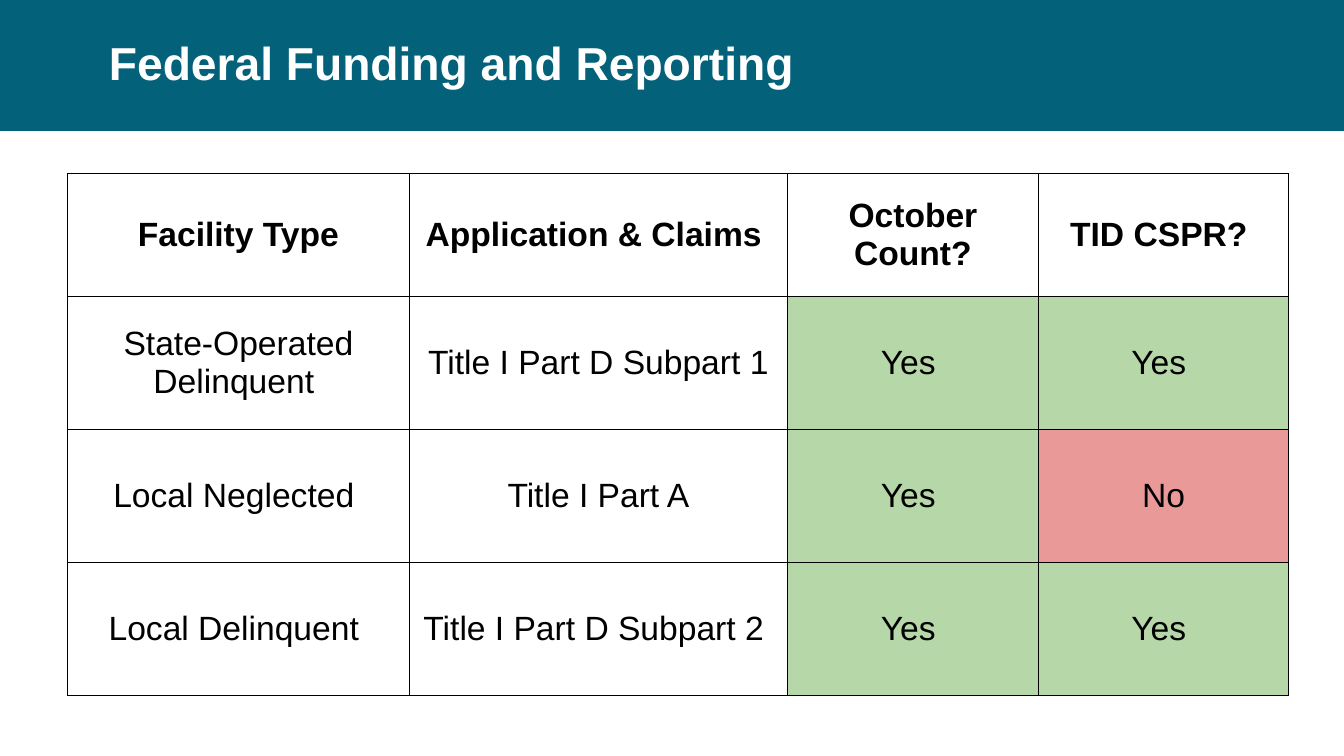
from lxml import etree
from pptx import Presentation
from pptx.dml.color import RGBColor
from pptx.enum.shapes import MSO_SHAPE
from pptx.enum.text import MSO_ANCHOR, PP_ALIGN
from pptx.oxml.ns import qn
from pptx.util import Inches, Pt

RECTANGLE = MSO_SHAPE.RECTANGLE
MIDDLE = MSO_ANCHOR.MIDDLE
LEFT, CENTER = PP_ALIGN.LEFT, PP_ALIGN.CENTER

TEAL = RGBColor(0x03, 0x61, 0x7A)
WHITE = RGBColor(0xFF, 0xFF, 0xFF)
BLACK = RGBColor(0x00, 0x00, 0x00)
GREEN = RGBColor(0xB6, 0xD7, 0xA8)
RED = RGBColor(0xEA, 0x99, 0x99)

# Content
TITLE = "Federal Funding and Reporting"
ROWS = [
    ("Facility Type", "Application & Claims ", "October Count?", "TID CSPR? "),
    ("State-Operated Delinquent ", "Title I Part D Subpart 1", "Yes ", "Yes "),
    ("Local Neglected ", "Title I Part A", "Yes ", "No"),
    ("Local Delinquent ", "Title I Part D Subpart 2 ", "Yes ", "Yes "),
]
ANSWER_FILLS = {"Yes": GREEN, "No": RED}

# Layout in inches
SLIDE_WIDTH, SLIDE_HEIGHT, BANNER_HEIGHT = 13.33, 7.5, 1.3
TITLE_LEFT, TITLE_WIDTH = 0.98, 11.5
TABLE_LEFT, TABLE_TOP = 0.67, 1.72
COLUMN_WIDTHS = [3.39, 3.75, 2.49, 2.48]
ROW_HEIGHTS = [1.22] + [1.32] * 3
CELL_MARGIN = 0.1
BORDER_WIDTH = Pt(0.75)

TITLE_FONT = {"name": "Arial", "size": Pt(33), "bold": True}
HEADER_FONT = {"name": "Arial", "size": Pt(24), "bold": True}
BODY_FONT = {**HEADER_FONT, "bold": False}


def write(para, text, font, color, alignment):
    para.alignment = alignment
    span = para.add_run()
    span.text = text
    for name, value in font.items():
        setattr(span.font, name, value)
    span.font.color.rgb = color


def draw_borders(cell):
    properties = cell._tc.get_or_add_tcPr()
    for position, side in enumerate(("lnL", "lnR", "lnT", "lnB")):
        line = etree.Element(qn(f"a:{side}"), w=str(int(BORDER_WIDTH)))
        fill = etree.SubElement(line, qn("a:solidFill"))
        etree.SubElement(fill, qn("a:srgbClr"), val=str(BLACK))
        properties.insert(position, line)


deck = Presentation()
deck.slide_width, deck.slide_height = Inches(SLIDE_WIDTH), Inches(SLIDE_HEIGHT)
page = deck.slides.add_slide(deck.slide_layouts[5])

# Banner, placed behind the title
banner = page.shapes.add_shape(
    RECTANGLE, 0, 0, Inches(SLIDE_WIDTH), Inches(BANNER_HEIGHT))
banner.shadow.inherit = False
banner.fill.solid()
banner.fill.fore_color.rgb = TEAL
banner.line.fill.background()
page.shapes._spTree.insert(2, banner._element)

# Title
title = page.shapes.title
title.left, title.top = Inches(TITLE_LEFT), 0
title.width, title.height = Inches(TITLE_WIDTH), Inches(BANNER_HEIGHT)
title.text_frame.vertical_anchor = MIDDLE
title_para = title.text_frame.paragraphs[0]
title_para.line_spacing = 0.9
write(title_para, TITLE, TITLE_FONT, WHITE, LEFT)

# Table
table = page.shapes.add_table(
    len(ROWS), len(COLUMN_WIDTHS), Inches(TABLE_LEFT), Inches(TABLE_TOP),
    Inches(sum(COLUMN_WIDTHS)), Inches(sum(ROW_HEIGHTS))).table
table.first_row = table.horz_banding = False
for column, width in zip(table.columns, COLUMN_WIDTHS):
    column.width = Inches(width)

for row_index, (texts, height) in enumerate(zip(ROWS, ROW_HEIGHTS)):
    table.rows[row_index].height = Inches(height)
    font = BODY_FONT if row_index else HEADER_FONT
    for column_index, text in enumerate(texts):
        cell = table.cell(row_index, column_index)
        cell.vertical_anchor = MIDDLE
        for side in ("left", "right", "top", "bottom"):
            setattr(cell, f"margin_{side}", Inches(CELL_MARGIN))
        cell.fill.solid()
        cell.fill.fore_color.rgb = ANSWER_FILLS.get(text.strip(), WHITE)
        write(cell.text_frame.paragraphs[0], text, font, BLACK, CENTER)
        draw_borders(cell)

deck.save("out.pptx")
